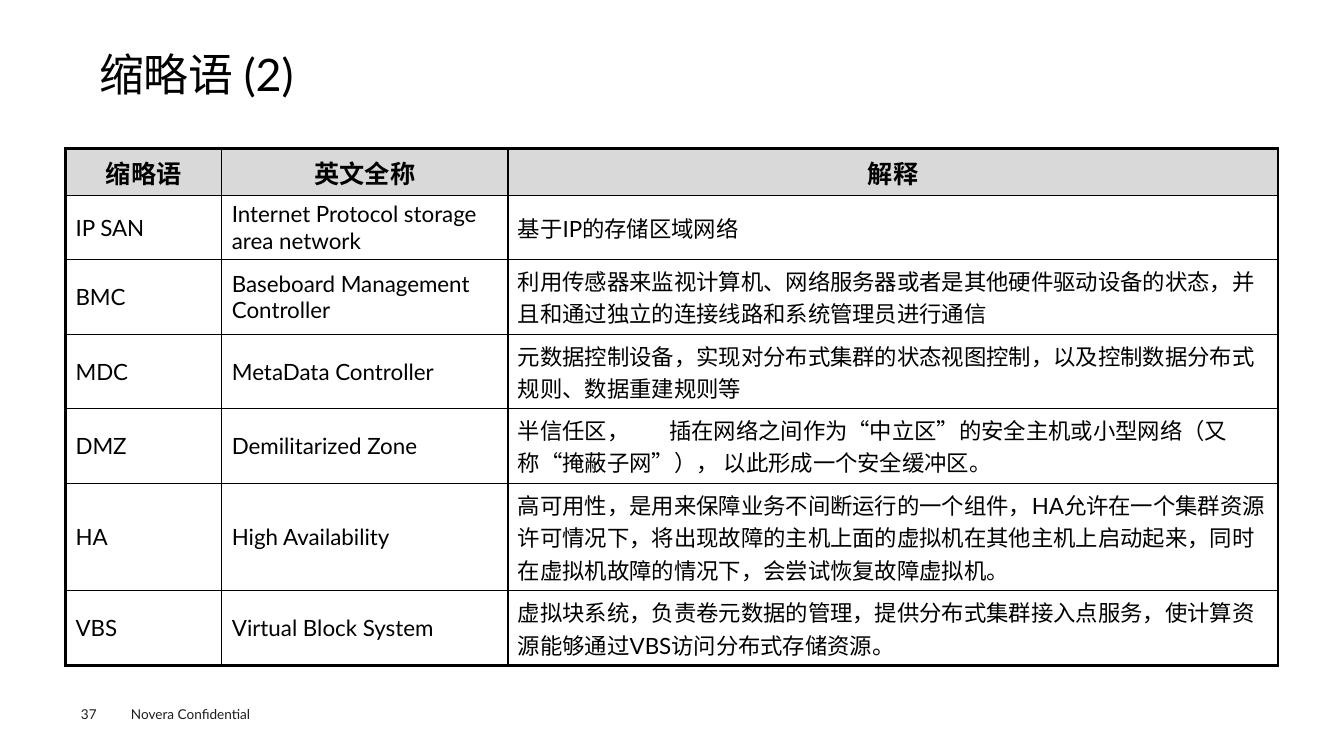
from lxml import etree
from pptx import Presentation
from pptx.dml.color import RGBColor
from pptx.enum.text import MSO_ANCHOR as Anchor, PP_ALIGN as Align
from pptx.oxml.ns import qn
from pptx.util import Cm, Pt

TITLE = "缩略语 (2)"
PAGE = "37"
NOTICE = "Novera Confidential"
HEAD = ("缩略语", "英文全称", "解释")
TERMS = [
    ("IP SAN", "Internet Protocol storage area network", "基于IP的存储区域网络"),
    ("BMC", "Baseboard Management Controller",
     "利用传感器来监视计算机、网络服务器或者是其他硬件驱动设备的状态，"
     "并且和通过独立的连接线路和系统管理员进行通信"),
    ("MDC", "MetaData Controller",
     "元数据控制设备，实现对分布式集群的状态视图控制，"
     "以及控制数据分布式规则、数据重建规则等"),
    ("DMZ", "Demilitarized Zone",
     "半信任区，\t插在网络之间作为“中立区”的安全主机或小型网络"
     "（又称“掩蔽子网”）， 以此形成一个安全缓冲区。"),
    ("HA", "High Availability",
     "高可用性，是用来保障业务不间断运行的一个组件，"
     "HA允许在一个集群资源许可情况下，将出现故障的主机上面的虚拟机"
     "在其他主机上启动起来，同时在虚拟机故障的情况下，会尝试恢复故障虚拟机。"),
    ("VBS", "Virtual Block System",
     "虚拟块系统，负责卷元数据的管理，提供分布式集群接入点服务，"
     "使计算资源能够通过VBS访问分布式存储资源。"),
]
WIDTHS = (3.94, 7.21, 19.41)
HEIGHTS = (1.19, 1.6, 1.88, 1.88, 1.88, 2.71, 1.88)
BLACK, WHITE, GRAY, INK = "000000", "FFFFFF", "D9D9D9", "1D1D1B"
THIN, THICK = Pt(1), Pt(2.25)


def color(code):
    return RGBColor.from_string(code)


def write(frame, text, size=16, ink=BLACK, bold=False, align=Align.LEFT, space=None):
    para = frame.paragraphs[0]
    para.alignment = align
    para.line_spacing = space
    run = para.add_run()
    run.text = text
    font = run.font
    font.name, font.size, font.bold = "Lato", Pt(size), bold
    font.color.rgb = color(ink)


def label(slide, text, left, top, width, height, inset=(0, 0),
          anchor=Anchor.TOP, **style):
    box = slide.shapes.add_textbox(Cm(left), Cm(top), Cm(width), Cm(height))
    frame = box.text_frame
    frame.word_wrap = True
    frame.vertical_anchor = anchor
    frame.margin_left = frame.margin_right = Cm(inset[0])
    frame.margin_top = frame.margin_bottom = Cm(inset[1])
    write(frame, text, **style)


def border(cell, sides):
    """Draw the cell's edges ahead of its fill, as the schema demands."""
    props = cell._tc.get_or_add_tcPr()
    for spot, (side, width) in enumerate(sides.items()):
        line = etree.Element(qn("a:ln" + side), w=str(width))
        fill = etree.SubElement(line, qn("a:solidFill"))
        etree.SubElement(fill, qn("a:srgbClr"), val=BLACK)
        props.insert(spot, line)


def glossary(slide):
    rows = [HEAD] + TERMS
    last, end = len(rows) - 1, len(HEAD) - 1
    table = slide.shapes.add_table(
        len(rows), len(HEAD), Cm(1.65), Cm(3.74),
        Cm(sum(WIDTHS)), Cm(sum(HEIGHTS))).table
    table.horz_banding = False
    for col, width in zip(table.columns, WIDTHS):
        col.width = Cm(width)
    for r, texts in enumerate(rows):
        table.rows[r].height = Cm(HEIGHTS[r])
        head = r == 0
        for c, text in enumerate(texts):
            cell = table.cell(r, c)
            cell.vertical_anchor = Anchor.MIDDLE
            cell.fill.solid()
            cell.fill.fore_color.rgb = color(GRAY if head else WHITE)
            write(cell.text_frame, text, size=18 if head else 16, bold=head,
                  align=Align.CENTER if head else Align.LEFT)
            border(cell, {"L": THICK if c == 0 else THIN,
                          "R": THICK if c == end else THIN,
                          "T": THICK if head else THIN,
                          "B": THICK if r == last else THIN})


def main():
    deck = Presentation()
    deck.slide_width, deck.slide_height = Cm(33.87), Cm(19.05)
    slide = deck.slides.add_slide(deck.slide_layouts[6])
    label(slide, TITLE, 2.5, 1.25, 31.37, 1.37, anchor=Anchor.MIDDLE,
          size=32, space=0.9)
    glossary(slide)
    label(slide, PAGE, 2.04, 17.78, 1.4, 0.41, size=9.7, ink=INK)
    label(slide, NOTICE, 3.05, 17.65, 4.06, 0.68, inset=(0.25, 0.13),
          size=9.7, ink=INK)
    deck.save("out.pptx")


if __name__ == "__main__":
    main()
